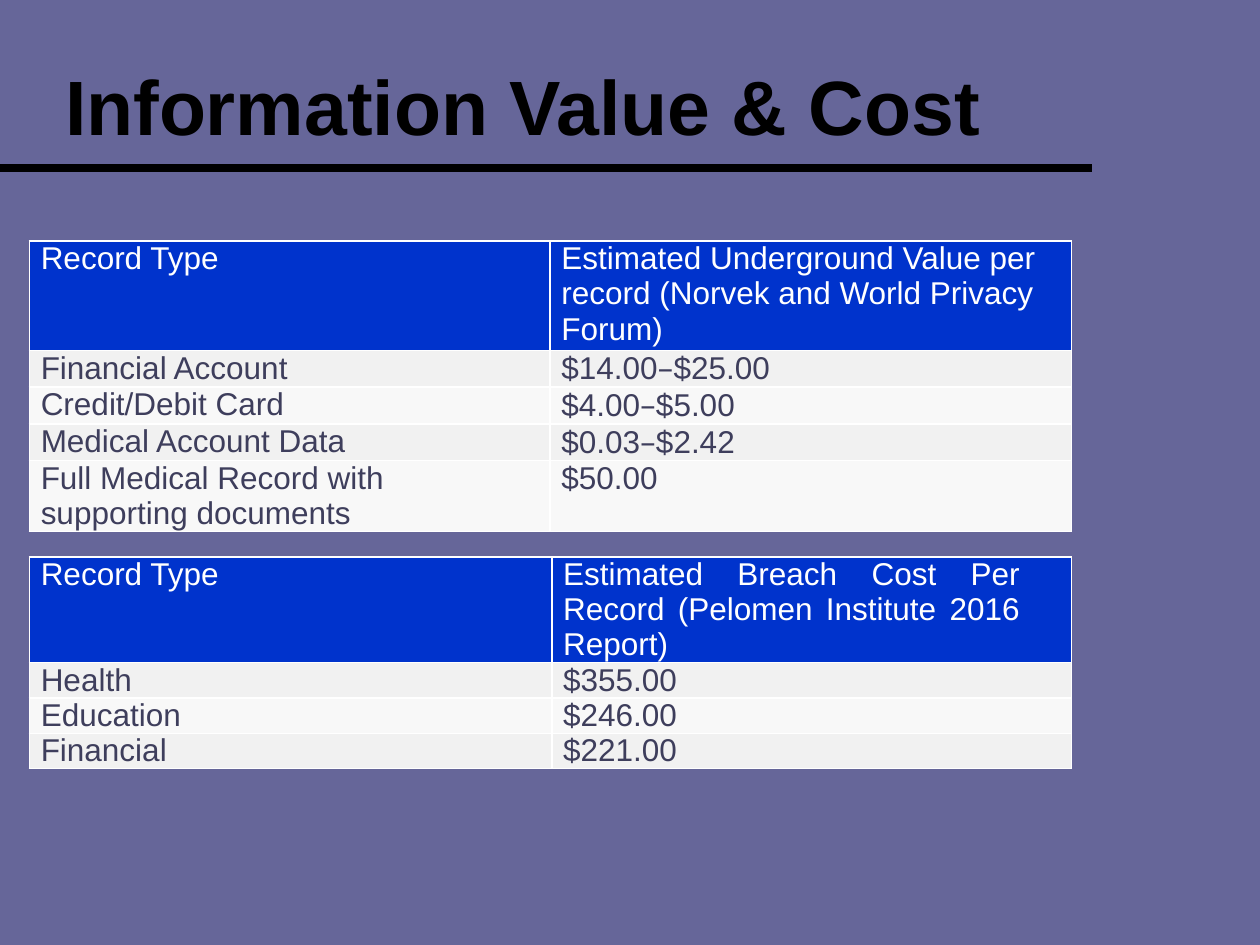
from dataclasses import dataclass

from lxml import etree
from pptx import Presentation
from pptx.dml.color import RGBColor
from pptx.enum.shapes import MSO_CONNECTOR
from pptx.enum.text import MSO_ANCHOR, MSO_AUTO_SIZE, PP_ALIGN
from pptx.oxml.ns import qn
from pptx.util import Pt

LINE = MSO_CONNECTOR.STRAIGHT
MIDDLE, TOP = MSO_ANCHOR.MIDDLE, MSO_ANCHOR.TOP
LEFT, JUSTIFY = PP_ALIGN.LEFT, PP_ALIGN.JUSTIFY
NO_FIT = MSO_AUTO_SIZE.NONE


@dataclass(frozen=True)
class Theme:
    back: str = "666699"
    ink: str = "000000"
    head: str = "0033CC"
    white: str = "FFFFFF"
    body: str = "3E3E5C"
    bands: tuple = ("F1F1F1", "F8F8F8")
    font: str = "Arial"
    dash: str = "DejaVu Sans"
    title: int = 44
    text: int = 18
    inset: float = 6.5


class Deck:
    def __init__(self, theme):
        self.theme = theme
        self.show = Presentation()
        self.show.slide_width, self.show.slide_height = Pt(720), Pt(540)
        self.slide = self.show.slides.add_slide(self.show.slide_layouts[5])
        fill = self.slide.background.fill
        fill.solid()
        fill.fore_color.rgb = RGBColor.from_string(theme.back)

    def run(self, para, text, size, color, bold=False, face=None):
        run = para.add_run()
        run.text = text
        font = run.font
        font.name, font.size, font.bold = face or self.theme.font, Pt(size), bold
        font.color.rgb = RGBColor.from_string(color)

    def title(self, text, left, top, width, height):
        box = self.slide.shapes.title
        box.left, box.top, box.width, box.height = map(Pt, (left, top, width, height))
        frame = box.text_frame
        frame.word_wrap, frame.auto_size = True, NO_FIT
        frame.vertical_anchor = MIDDLE
        para = frame.paragraphs[0]
        para.alignment = LEFT
        self.run(para, text, self.theme.title, self.theme.ink, bold=True)

    def rule(self, left, right, top, weight):
        line = self.slide.shapes.add_connector(LINE, Pt(left), Pt(top), Pt(right), Pt(top))
        line.line.width = Pt(weight)
        line.line.color.rgb = RGBColor.from_string(self.theme.ink)
        etree.SubElement(line._element.spPr, qn("a:effectLst"))

    def edges(self, cell):
        props = cell._tc.get_or_add_tcPr()
        for side in ("lnL", "lnR", "lnT", "lnB"):
            edge = etree.SubElement(props, qn("a:" + side), w=str(Pt(1)))
            fill = etree.SubElement(edge, qn("a:solidFill"))
            etree.SubElement(fill, qn("a:srgbClr"), val=self.theme.white)

    def cell(self, cell, text, color, fill, right=0, align=LEFT):
        self.edges(cell)
        cell.fill.solid()
        cell.fill.fore_color.rgb = RGBColor.from_string(fill)
        cell.margin_left, cell.margin_right = Pt(self.theme.inset), Pt(right)
        cell.margin_top = cell.margin_bottom = 0
        cell.vertical_anchor = TOP
        para = cell.text_frame.paragraphs[0]
        para.alignment = align
        # The dash of a price range has its own font
        start, dash, end = text.partition("–")
        for part, face in ((start, None), (dash, self.theme.dash), (end, None)):
            if part:
                self.run(para, part, self.theme.text, color, face=face)

    def table(self, left, top, cols, heights, rows, special):
        theme = self.theme
        frame = self.slide.shapes.add_table(
            len(rows), len(cols), Pt(left), Pt(top), Pt(sum(cols)), Pt(sum(heights)))
        table = frame.table
        table.first_row = table.horz_banding = False
        for col, width in zip(table.columns, cols):
            col.width = Pt(width)
        for r, (row, height) in enumerate(zip(rows, heights)):
            table.rows[r].height = Pt(height)
            color = theme.body if r else theme.white
            fill = theme.bands[(r - 1) % 2] if r else theme.head
            for c, text in enumerate(row):
                self.cell(table.cell(r, c), text, color, fill, **special.get((r, c), {}))


def main():
    deck = Deck(Theme())

    # Heading
    deck.title("Information Value & Cost", 30, 6, 588, 108)
    deck.rule(0, 624, 96.2, 4.5)

    # Underground value
    deck.table(16.8, 137.8, (297.5, 298), (62.5, 21, 21, 21, 40.5), (
        ("Record Type",
         "Estimated Underground Value per record (Norvek and World Privacy Forum)"),
        ("Financial Account", "$14.00–$25.00"),
        ("Credit/Debit Card", "$4.00–$5.00"),
        ("Medical Account Data", "$0.03–$2.42"),
        ("Full Medical Record with supporting documents", "$50.00"),
    ), {(4, 0): {"right": 36}})

    # Breach cost
    deck.table(16.8, 318.2, (298.5, 297), (60.4, 20.2, 20.2, 20.2), (
        ("Record Type",
         "Estimated Breach Cost Per Record (Pelomen Institute 2016 Report)"),
        ("Health", "$355.00"),
        ("Education", "$246.00"),
        ("Financial", "$221.00"),
    ), {(0, 1): {"right": 29.5, "align": JUSTIFY}})

    deck.show.save("out.pptx")


if __name__ == "__main__":
    main()
